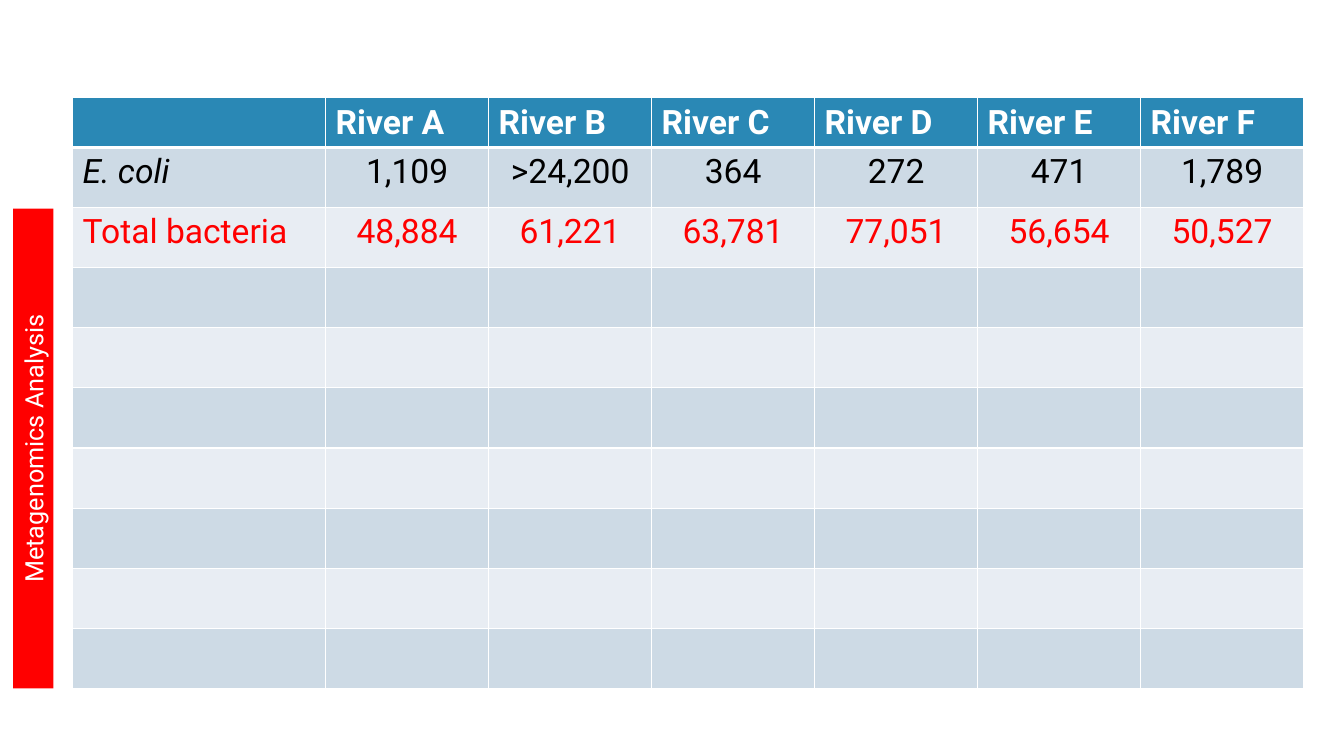
from dataclasses import dataclass

import pptx
import pptx.dml.color
import pptx.enum.shapes
import pptx.enum.text
import pptx.oxml
import pptx.oxml.ns
import pptx.table
import pptx.util
from pptx.util import Inches

COLORS = {
    "header": "2A88B5",
    "dark band": "CDDAE5",
    "light band": "E8EDF3",
    "white": "FFFFFF",
    "black": "000000",
    "red": "FF0000",
}
FONT = "Roboto"
ROW_COUNT = 10
TABLE_LEFT, TABLE_TOP, TABLE_WIDTH, TABLE_HEIGHT = 0.72, 0.97, 12.21, 5.85
LABEL_WIDTH, HEADER_HEIGHT = 2.51, 0.48
THIN, THICK = 1, 3


@dataclass
class TableRow:
    label: str
    values: list[str]
    color: str
    bold: bool = False
    italic_label: bool = False
    centered: bool = True


ROWS = [
    TableRow("", [f"River {letter}" for letter in "ABCDEF"], "white", bold=True, centered=False),
    TableRow("E. coli", ["1,109", ">24,200", "364", "272", "471", "1,789"], "black", italic_label=True),
    TableRow("Total bacteria", ["48,884", "61,221", "63,781", "77,051", "56,654", "50,527"], "red"),
]


def rgb(name: str) -> pptx.dml.color.RGBColor:
    return pptx.dml.color.RGBColor.from_string(COLORS[name])


def style_cell(cell: pptx.table._Cell, row_index: int) -> None:
    """Give a cell its white borders and band fill."""
    properties = cell._tc.get_or_add_tcPr()
    widths = {
        "lnL": THIN,
        "lnR": THIN,
        "lnT": THICK if row_index == 1 else THIN,
        "lnB": THICK if row_index == 0 else THIN,
    }
    for side, width in widths.items():
        properties.append(pptx.oxml.parse_xml(
            f'<a:{side} {pptx.oxml.ns.nsdecls("a")} w="{pptx.util.Pt(width)}">'
            f'<a:solidFill><a:srgbClr val="{COLORS["white"]}"/></a:solidFill></a:{side}>'
        ))
    band = "header" if row_index == 0 else "dark band" if row_index % 2 else "light band"
    cell.fill.solid()
    cell.fill.fore_color.rgb = rgb(band)


def write_row(table: pptx.table.Table, row_index: int, row: TableRow) -> None:
    for column_index, text in enumerate([row.label, *row.values]):
        if not text:
            continue
        paragraph = table.cell(row_index, column_index).text_frame.paragraphs[0]
        paragraph.text = text
        if row.centered and column_index > 0:
            paragraph.alignment = pptx.enum.text.PP_ALIGN.CENTER
        paragraph.font.name = FONT
        paragraph.font.size = pptx.util.Pt(24)
        paragraph.font.bold = row.bold
        paragraph.font.italic = row.italic_label and column_index == 0
        paragraph.font.color.rgb = rgb(row.color)


def main() -> None:
    presentation = pptx.Presentation()
    presentation.slide_width = Inches(13.33)
    presentation.slide_height = Inches(7.5)
    slide = presentation.slides.add_slide(presentation.slide_layouts[6])

    # River table
    column_count = 1 + len(ROWS[0].values)
    table = slide.shapes.add_table(
        ROW_COUNT, column_count,
        Inches(TABLE_LEFT), Inches(TABLE_TOP), Inches(TABLE_WIDTH), Inches(TABLE_HEIGHT),
    ).table
    for column_index, column in enumerate(table.columns):
        value_width = (TABLE_WIDTH - LABEL_WIDTH) / (column_count - 1)
        column.width = Inches(value_width if column_index else LABEL_WIDTH)
    for row_index, row in enumerate(table.rows):
        body_height = (TABLE_HEIGHT - HEADER_HEIGHT) / (ROW_COUNT - 1)
        row.height = Inches(body_height if row_index else HEADER_HEIGHT)
        for cell in row.cells:
            style_cell(cell, row_index)
    for row_index, row in enumerate(ROWS):
        write_row(table, row_index, row)

    # Vertical label beside the metagenomics rows
    label = slide.shapes.add_shape(
        pptx.enum.shapes.MSO_SHAPE.RECTANGLE,
        Inches(-2.05), Inches(4.25), Inches(4.76), Inches(0.4),
    )
    label.rotation = 270
    label.shadow.inherit = False
    label.fill.solid()
    label.fill.fore_color.rgb = rgb("red")
    label.line.fill.background()
    label.text_frame.word_wrap = True
    label.text_frame.auto_size = pptx.enum.text.MSO_AUTO_SIZE.SHAPE_TO_FIT_TEXT
    paragraph = label.text_frame.paragraphs[0]
    paragraph.text = "Metagenomics Analysis"
    paragraph.alignment = pptx.enum.text.PP_ALIGN.CENTER
    paragraph.font.name = FONT
    paragraph.font.size = pptx.util.Pt(18)
    paragraph.font.color.rgb = rgb("white")

    presentation.save("out.pptx")


if __name__ == "__main__":
    main()
